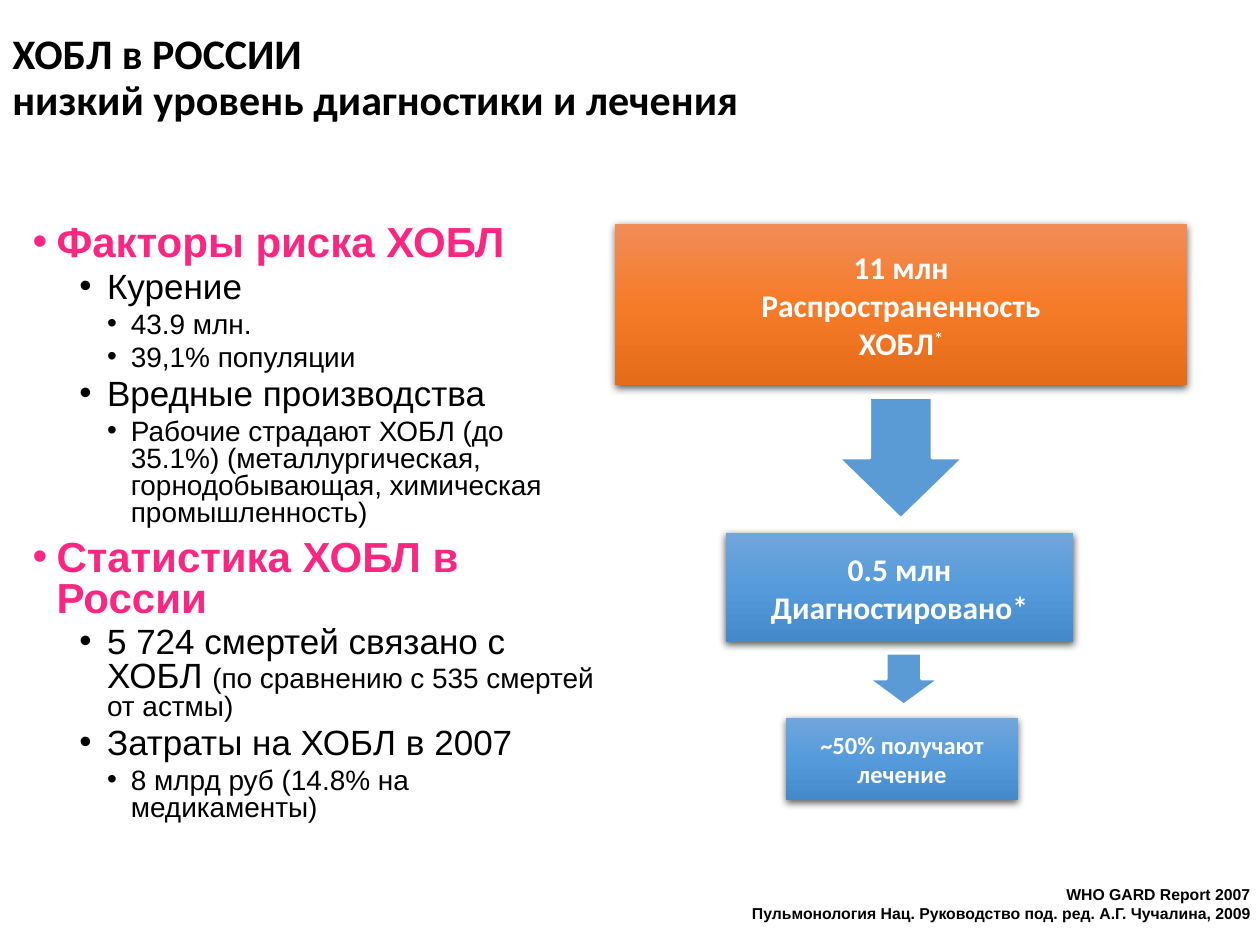
from copy import deepcopy

from lxml.etree import SubElement
from pptx import Presentation
from pptx.dml.color import RGBColor
from pptx.enum.shapes import MSO_SHAPE
from pptx.enum.text import MSO_ANCHOR, PP_ALIGN
from pptx.oxml.ns import qn
from pptx.util import Cm, Pt

BLACK, WHITE, PINK, BLUE = "000000", "FFFFFF", "FA2681", "5B9BD5"
ORANGE_SHADES = ("F18C57", "F67B28", "E56C19")
BLUE_SHADES = ("71A6DB", "559BDB", "448ACA")

LEVELS = (
    dict(margin=0.48, hang=0.48, size=24, before=7.5, color=PINK, bold=True),
    dict(margin=1.5, hang=0.56, size=20, before=3.8, color=BLACK, bold=False),
    dict(margin=1.98, hang=0.48, size=16, before=3.8, color=BLACK, bold=False),
)

BULLETS = (
    (0, "Факторы риска ХОБЛ", ""),
    (1, "Курение", ""),
    (2, "43.9 млн.", ""),
    (2, "39,1% популяции", ""),
    (1, "Вредные производства", ""),
    (2, "Рабочие страдают ХОБЛ (до 35.1%) (металлургическая, "
        "горнодобывающая, химическая промышленность)", ""),
    (0, "Cтатистика ХОБЛ в России", ""),
    (1, "5 724 смертей связано с ХОБЛ ", "(по сравнению с 535 смертей от астмы)"),
    (1, "Затраты на ХОБЛ в 2007", ""),
    (2, "8 млрд руб (14.8% на медикаменты)", ""),
)


def rgb(value):
    return RGBColor.from_string(value)


class Deck:
    heading_font = "Calibri"
    body_font = "Arial"

    def __init__(self):
        self.prs = Presentation()
        self.prs.slide_width, self.prs.slide_height = Cm(25.4), Cm(19.05)
        self.slide = self.prs.slides.add_slide(self.prs.slide_layouts[6])

    def run(self, p, text, font, size, color, bold=True):
        r = p.add_run()
        r.text = text
        r.font.name, r.font.size, r.font.bold = font, Pt(size), bold
        r.font.color.rgb = rgb(color)
        return r

    def paragraphs(self, tf, count):
        return [tf.paragraphs[0]] + [tf.add_paragraph() for _ in range(count - 1)]

    def text_frame(self, box, anchor):
        tf = self.slide.shapes.add_textbox(*map(Cm, box)).text_frame
        tf.word_wrap = True
        tf.vertical_anchor = anchor
        return tf

    def title(self, box, lines):
        p = self.text_frame(box, MSO_ANCHOR.MIDDLE).paragraphs[0]
        p.line_spacing = 0.9
        for i, line in enumerate(lines):
            if i:
                p.add_line_break()
            self.run(p, line, self.heading_font, 24, BLACK)

    def footer(self, box, lines):
        tf = self.text_frame(box, MSO_ANCHOR.MIDDLE)
        tf.margin_left, tf.margin_right = Cm(0.1), Cm(0.2)
        tf.margin_top = tf.margin_bottom = 0
        for p, line in zip(self.paragraphs(tf, len(lines)), lines):
            p.alignment = PP_ALIGN.RIGHT
            self.run(p, line, self.body_font, 9, BLACK)

    def bullets(self, box, items):
        tf = self.text_frame(box, MSO_ANCHOR.TOP)
        for p, (level, text, detail) in zip(self.paragraphs(tf, len(items)), items):
            style = LEVELS[level]
            p.level = level
            p.line_spacing = 0.8
            p.space_before = Pt(style["before"])
            pPr = p._p.get_or_add_pPr()
            pPr.set("marL", str(Cm(style["margin"])))
            pPr.set("indent", str(-Cm(style["hang"])))
            SubElement(pPr, qn("a:buFont"), typeface=self.body_font)
            SubElement(pPr, qn("a:buChar"), char="•")
            self.run(p, text, self.body_font, style["size"], style["color"], style["bold"])
            if detail:
                self.run(p, detail, self.body_font, 16, BLACK, False)

    def card(self, box, shades, lines, size=18, wrap=False, mark=""):
        s = self.slide.shapes.add_shape(MSO_SHAPE.RECTANGLE, *map(Cm, box))
        self.gradient(s, shades)
        s.line.fill.background()
        self.soft_shadow(s)
        tf = s.text_frame
        tf.word_wrap = wrap
        tf.vertical_anchor = MSO_ANCHOR.MIDDLE
        for p, line in zip(self.paragraphs(tf, len(lines)), lines):
            p.alignment = PP_ALIGN.CENTER
            self.run(p, line, self.heading_font, size, WHITE)
        if mark:
            r = self.run(p, mark, self.heading_font, size, WHITE)
            r._r.get_or_add_rPr().set("baseline", "30000")

    def gradient(self, s, shades):
        s.fill.gradient()
        s.fill.gradient_angle = 270
        stops = s._element.spPr.find(".//" + qn("a:gsLst"))
        stops.append(deepcopy(stops[0]))
        for i, (stop, shade) in enumerate(zip(s.fill.gradient_stops, shades)):
            stop.color.rgb = rgb(shade)
            stop.position = i / 2

    def soft_shadow(self, s):
        s.shadow.inherit = False
        effects = s._element.spPr.find(qn("a:effectLst"))
        shadow = SubElement(effects, qn("a:outerShdw"), blurRad=str(Pt(4.5)),
                            dist=str(Pt(1.5)), dir="5400000", rotWithShape="0")
        color = SubElement(shadow, qn("a:srgbClr"), val=BLACK)
        SubElement(color, qn("a:alpha"), val="63000")

    def down_arrow(self, box):
        s = self.slide.shapes.add_shape(MSO_SHAPE.RIGHT_ARROW, *map(Cm, box))
        s.rotation = 90
        s.shadow.inherit = False
        s.fill.solid()
        s.fill.fore_color.rgb = rgb(BLUE)
        s.line.color.rgb = rgb(WHITE)
        s.line.width = Pt(1.5)

    def save(self):
        self.prs.save("out.pptx")


def main():
    deck = Deck()
    deck.title((0, 0, 21.82, 3.18),
               ("ХОБЛ в РОССИИ", "низкий уровень диагностики и лечения"))
    deck.footer((0, 17.83, 25.4, 0.76),
                ("WHO GARD Report 2007",
                 "Пульмонология Нац. Руководство под. ред. А.Г. Чучалина, 2009"))
    deck.bullets((0.41, 4.42, 11.91, 13.67), BULLETS)
    deck.card((12.4, 4.52, 11.53, 3.25), ORANGE_SHADES,
              ("11 млн", "Распространенность", "ХОБЛ"), mark="*")
    deck.card((14.63, 10.74, 7.01, 2.21), BLUE_SHADES,
              ("0.5 млн", "Диагностировано*"))
    deck.down_arrow((16.94, 7.98, 2.44, 2.51))
    deck.card((15.85, 14.48, 4.67, 1.65), BLUE_SHADES,
              ("~50% получают лечение",), size=14, wrap=True)
    deck.down_arrow((17.7, 12.98, 1.04, 1.42))
    deck.save()


if __name__ == "__main__":
    main()
